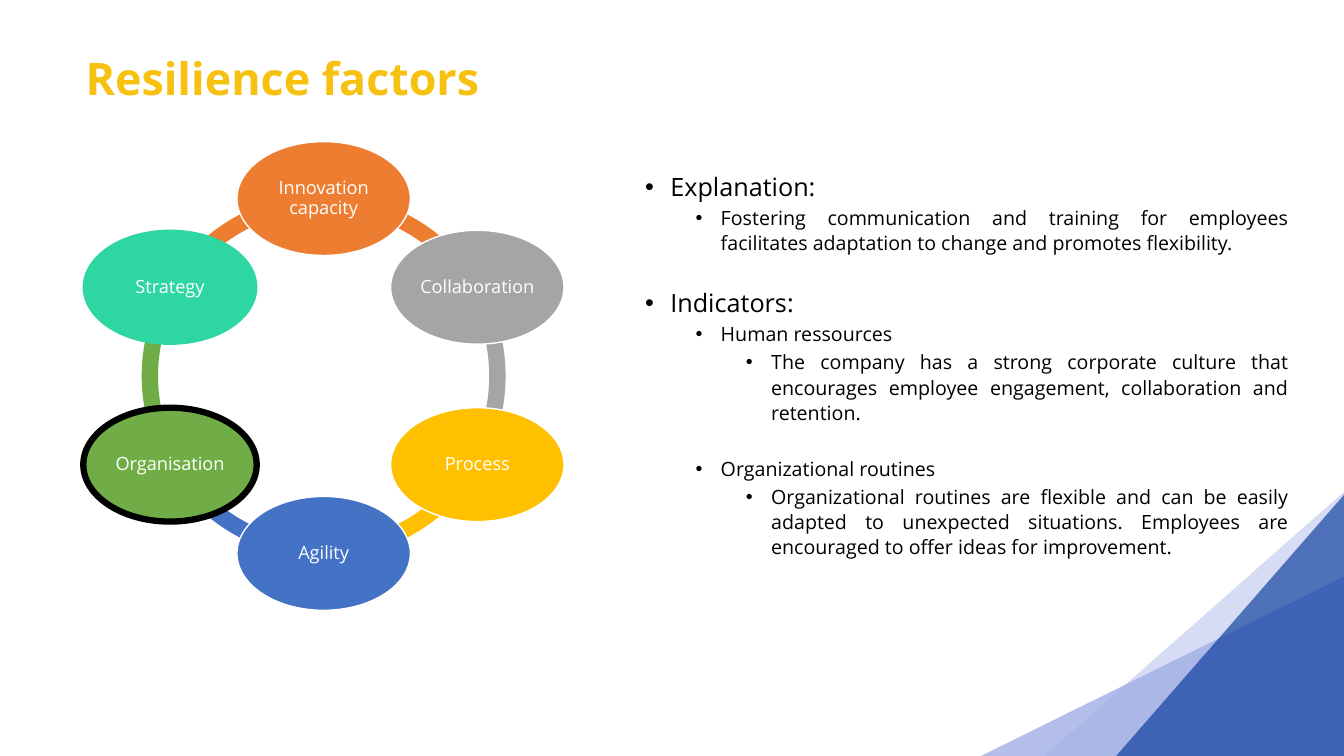
from math import cos, radians, sin

from lxml import etree
from pptx import Presentation
from pptx.dml.color import RGBColor
from pptx.enum.shapes import MSO_SHAPE as Shape
from pptx.enum.text import MSO_ANCHOR as Anchor, PP_ALIGN as Align
from pptx.oxml.ns import qn
from pptx.util import Inches, Pt

FONT = "Open Sans"
WHITE = RGBColor(0xFF, 0xFF, 0xFF)
BLACK = RGBColor(0x00, 0x00, 0x00)
GOLD = RGBColor(0xF7, 0xC1, 0x11)
ORANGE = RGBColor(0xED, 0x7D, 0x31)
GREY = RGBColor(0xA5, 0xA5, 0xA5)
YELLOW = RGBColor(0xFF, 0xC0, 0x00)
BLUE = RGBColor(0x44, 0x72, 0xC4)
GREEN = RGBColor(0x70, 0xAD, 0x47)
TEAL = RGBColor(0x2E, 0xD7, 0xA1)
PALE_BLUE = RGBColor(0xC5, 0xCE, 0xEF)
SOFT_BLUE = RGBColor(0x9F, 0xAE, 0xE5)
NAVY = RGBColor(0x00, 0x33, 0x99)

# Content
TITLE = "Resilience factors"
# label, fill, outline, outline width, colour of the arc to the next factor
FACTORS = [
    ("Innovation capacity", ORANGE, WHITE, 1, ORANGE),
    ("Collaboration", GREY, WHITE, 1, GREY),
    ("Process", YELLOW, WHITE, 1, YELLOW),
    ("Agility", BLUE, WHITE, 1, BLUE),
    ("Organisation", GREEN, BLACK, 4.5, GREEN),
    ("Strategy", TEAL, TEAL, 1, ORANGE),
]
# level, space before, text
BODY = [
    (0, 0, "Explanation:"),
    (1, 2, "Fostering communication and training for employees facilitates "
           "adaptation to change and promotes flexibility."),
    (0, 22, "Indicators:"),
    (1, 2, "Human ressources"),
    (2, 2, "The company has a strong corporate culture that encourages "
           "employee engagement, collaboration and retention."),
    (1, 22, "Organizational routines"),
    (2, 2, "Organizational routines are flexible and can be easily adapted to "
           "unexpected situations. Employees are encouraged to offer ideas "
           "for improvement."),
]
# visible width, visible height, colour, opacity in percent
CORNER_TRIANGLES = [
    (2.97, 2.62, PALE_BLUE, 71),
    (3.6, 1.78, SOFT_BLUE, 79),
    (2.26, 2.59, NAVY, 63),
]

# Layout
SLIDE_WIDTH, SLIDE_HEIGHT = 13.33, 7.5
CENTRE_X, CENTRE_Y = 3.21, 3.73
ORBIT = 1.76
RING_SIZE, RING_THICKNESS = 3.61, 0.045
HUB_SIZE = 1.62
FACTOR_WIDTH, FACTOR_HEIGHT = 1.72, 1.13
STEP = 360 / len(FACTORS)
ARC_UNIT = 0.6  # one degree in block arc adjustment units
LEVEL_SIZES = (18, 14, 14)
LINE_SPACING = 1.07


def set_format(target, **values):
    for name, value in values.items():
        setattr(target, name, value)


def add_filled(slide, kind, centre_x, centre_y, width, height, color):
    shape = slide.shapes.add_shape(
        kind, Inches(centre_x - width / 2), Inches(centre_y - height / 2),
        Inches(width), Inches(height))
    shape.shadow.inherit = False
    shape.fill.solid()
    shape.fill.fore_color.rgb = color
    shape.line.fill.background()
    return shape


def write(paragraph, text, size, color, bold=False, **layout):
    run = paragraph.add_run()
    run.text = text
    set_format(run.font, name=FONT, size=Pt(size), bold=bold)
    run.font.color.rgb = color
    set_format(paragraph, **layout)


def add_bullet(paragraph, level):
    properties = paragraph._p.get_or_add_pPr()
    properties.set("marL", str(Inches(0.25 + 0.5 * level)))
    properties.set("indent", str(Inches(-0.25)))
    etree.SubElement(properties, qn("a:buFont")).set("typeface", "Arial")
    etree.SubElement(properties, qn("a:buChar")).set("char", "•")


def add_text_frame(slide, left, top, width, height):
    frame = slide.shapes.add_textbox(
        Inches(left), Inches(top), Inches(width), Inches(height)).text_frame
    frame.word_wrap = True
    return frame


def add_corner(slide):
    for width, height, color, opacity in CORNER_TRIANGLES:
        # Turned a quarter, so width and height change places
        triangle = add_filled(
            slide, Shape.ISOSCELES_TRIANGLE, SLIDE_WIDTH - width / 2,
            SLIDE_HEIGHT - height / 2, height, width, color)
        triangle.adjustments[0] = 0
        triangle.rotation = 270
        fill_color = triangle._element.spPr.find(".//" + qn("a:srgbClr"))
        etree.SubElement(fill_color, qn("a:alpha")).set("val", str(opacity * 1000))


def add_cycle(slide):
    angles = [(270 + STEP * index) % 360 for index in range(len(FACTORS))]

    # Ring segments around a white hub
    for angle, (*_, arc_color) in zip(angles, FACTORS):
        arc = add_filled(slide, Shape.BLOCK_ARC, CENTRE_X, CENTRE_Y,
                         RING_SIZE, RING_SIZE, arc_color)
        ends = (angle * ARC_UNIT, (angle + STEP) % 360 * ARC_UNIT)
        for index, value in enumerate((*ends, RING_THICKNESS)):
            arc.adjustments[index] = value
    add_filled(slide, Shape.OVAL, CENTRE_X, CENTRE_Y, HUB_SIZE, HUB_SIZE, WHITE)

    # Factors
    for angle, (label, fill, outline, line_width, _) in zip(angles, FACTORS):
        oval = add_filled(
            slide, Shape.OVAL, CENTRE_X + ORBIT * cos(radians(angle)),
            CENTRE_Y + ORBIT * sin(radians(angle)),
            FACTOR_WIDTH, FACTOR_HEIGHT, fill)
        oval.line.color.rgb = outline
        oval.line.width = Pt(line_width)
        inset = Inches(0.02)
        set_format(oval.text_frame, word_wrap=True, vertical_anchor=Anchor.MIDDLE,
                   margin_left=inset, margin_right=inset,
                   margin_top=inset, margin_bottom=inset)
        write(oval.text_frame.paragraphs[0], label, 13, WHITE,
              alignment=Align.CENTER, line_spacing=0.9)


def add_body(slide):
    frame = add_text_frame(slide, 6.3, 1.63, 6.58, 4.46)
    for index, (level, space, text) in enumerate(BODY):
        paragraph = frame.add_paragraph() if index else frame.paragraphs[0]
        add_bullet(paragraph, level)
        write(paragraph, text, LEVEL_SIZES[level], BLACK, level=level,
              alignment=Align.JUSTIFY, line_spacing=LINE_SPACING,
              space_before=Pt(space))


def main():
    presentation = Presentation()
    set_format(presentation, slide_width=Inches(SLIDE_WIDTH),
               slide_height=Inches(SLIDE_HEIGHT))
    slide = presentation.slides.add_slide(presentation.slide_layouts[6])
    add_corner(slide)
    title = add_text_frame(slide, 0.75, 0.19, 11.5, 1.13)
    title.vertical_anchor = Anchor.MIDDLE
    write(title.paragraphs[0], TITLE, 32, GOLD, bold=True,
          alignment=Align.JUSTIFY, line_spacing=LINE_SPACING)
    add_cycle(slide)
    add_body(slide)
    presentation.save("out.pptx")


if __name__ == "__main__":
    main()
